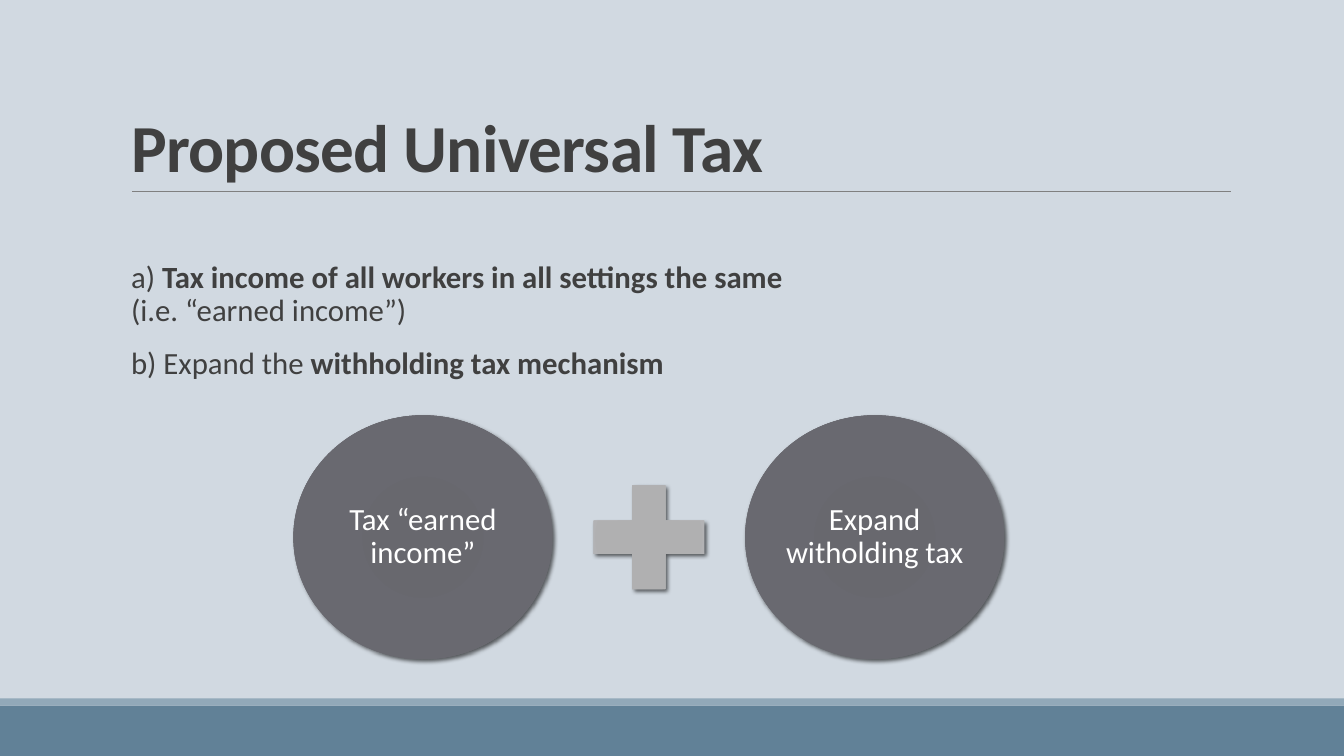
from lxml.etree import SubElement
from pptx import Presentation
from pptx.dml.color import RGBColor
from pptx.enum.shapes import MSO_CONNECTOR, MSO_SHAPE
from pptx.enum.text import MSO_ANCHOR, MSO_AUTO_SIZE, PP_ALIGN
from pptx.oxml import parse_xml
from pptx.oxml.ns import nsdecls, qn
from pptx.util import Inches, Pt

BACKGROUND = RGBColor(0xD1, 0xD9, 0xE1)
FOOTER = RGBColor(0x61, 0x81, 0x97)
FOOTER_EDGE = RGBColor(0x92, 0xA9, 0xB9)
RULE = RGBColor(0x80, 0x80, 0x80)
TEXT = RGBColor(0x40, 0x40, 0x40)
WHITE = RGBColor(0xFF, 0xFF, 0xFF)
# Gradient stops: position in percent and colour
CIRCLE_STOPS = [(0, RGBColor(0x67, 0x67, 0x6D)), (34, RGBColor(0x68, 0x68, 0x6E)),
                (70, RGBColor(0x69, 0x69, 0x70)), (100, RGBColor(0x6F, 0x6F, 0x74))]
PLUS_STOPS = [(0, RGBColor(0xAE, 0xAE, 0xAF)), (34, RGBColor(0xB0, 0xB0, 0xB1)),
              (70, RGBColor(0xB2, 0xB2, 0xB4)), (100, RGBColor(0xBB, 0xBB, 0xBC))]

FONT = "Calibri"
WIDTH, HEIGHT = 13.33, 7.5
POINTS = [
    [("a) ", False), ("Tax income of all workers in all settings the same \v", True),
     ("(i.e. “earned income”)", False)],
    [("b) Expand the ", False), ("withholding tax mechanism", True)],
]
TERMS = ["Tax “earned income”", "Expand witholding tax"]


def style(font, size, color, bold=None):
    font.name, font.size, font.bold = FONT, Pt(size), bold
    font.color.rgb = color


def place(shape, box):
    shape.left, shape.top, shape.width, shape.height = map(Inches, box)


def add_plain(slide, kind, box, color):
    shape = slide.shapes.add_shape(kind, *map(Inches, box))
    shape.shadow.inherit = False
    shape.fill.solid()
    shape.fill.fore_color.rgb = color
    shape.line.fill.background()
    return shape


def add_glossy(slide, kind, box, stops):
    """A shape with a radial gradient and a soft shadow."""
    shape = add_plain(slide, kind, box, stops[0][1])
    properties = shape.element.spPr
    stop_xml = "".join(f'<a:gs pos="{position * 1000}"><a:srgbClr val="{color}"/></a:gs>'
                       for position, color in stops)
    gradient = parse_xml(
        f'<a:gradFill {nsdecls("a")} rotWithShape="1"><a:gsLst>{stop_xml}</a:gsLst>'
        '<a:path path="circle"><a:fillToRect l="100000" t="100000" r="100000" b="100000"/>'
        '</a:path></a:gradFill>')
    properties.replace(properties.find(qn("a:solidFill")), gradient)
    shadow = parse_xml(
        f'<a:outerShdw {nsdecls("a")} blurRad="{Pt(3)}" dist="{Pt(2)}" dir="2700000"'
        ' rotWithShape="0"><a:srgbClr val="000000"><a:alpha val="60000"/></a:srgbClr>'
        '</a:outerShdw>')
    properties.find(qn("a:effectLst")).append(shadow)
    return shape


def add_footer(slide, box):
    left, top, width, height = box
    edge = 0.07
    add_plain(slide, MSO_SHAPE.RECTANGLE, (left, top + edge, width, height - edge), FOOTER)
    add_plain(slide, MSO_SHAPE.RECTANGLE, (left, top, width, edge), FOOTER_EDGE)


def add_title(slide, box):
    left, top, width, height = box
    title = slide.shapes.title
    place(title, box)
    frame = title.text_frame
    frame.text = "Proposed Universal Tax"
    frame.vertical_anchor = MSO_ANCHOR.BOTTOM
    frame.auto_size = MSO_AUTO_SIZE.NONE
    paragraph = frame.paragraphs[0]
    paragraph.alignment = PP_ALIGN.LEFT
    paragraph.line_spacing = 0.85
    style(paragraph.font, 48, TEXT, True)
    paragraph.runs[0].font._element.set("spc", "-50")

    # Rule under the title
    start, bottom = left + 0.11, top + height
    rule = slide.shapes.add_connector(MSO_CONNECTOR.STRAIGHT, Inches(start), Inches(bottom),
                                      Inches(start + 10.9), Inches(bottom))
    rule.line.color.rgb = RULE
    rule.line.width = Pt(0.5)
    SubElement(rule.element.spPr, qn("a:effectLst"))


def add_points(slide, box):
    body = slide.placeholders[1]
    place(body, box)
    frame = body.text_frame
    frame.auto_size = MSO_AUTO_SIZE.NONE
    frame.margin_right = 0
    for index, point in enumerate(POINTS):
        paragraph = frame.add_paragraph() if index else frame.paragraphs[0]
        paragraph.line_spacing = 0.9
        paragraph.space_before = Pt(12 if index else 0)
        paragraph.space_after = Pt(2)
        style(paragraph.font, 22, TEXT)
        for text, bold in point:
            start = len(paragraph.runs)
            # A line break ends its run
            words, line_break, _ = text.partition("\v")
            run = paragraph.add_run()
            run.text = words
            run.font.bold = bold
            if line_break:
                paragraph.add_line_break()
        properties = paragraph._p.get_or_add_pPr()
        properties.set("marL", "0")
        properties.set("indent", "0")
        properties.insert_element_before(parse_xml(f'<a:buNone {nsdecls("a")}/>'),
                                         "a:tabLst", "a:defRPr", "a:extLst")


def add_equation(slide, box):
    """Circles at both ends of the box, with a plus sign midway."""
    left, top, width, height = box
    circle_width, plus_width, plus_height = 2.57, 1.49, 1.4
    for index, term in enumerate(TERMS):
        circle_left = left + index * (width - circle_width)
        circle = add_glossy(slide, MSO_SHAPE.OVAL, (circle_left, top, circle_width, height),
                            CIRCLE_STOPS)
        frame = circle.text_frame
        frame.text = term
        frame.word_wrap = True
        frame.vertical_anchor = MSO_ANCHOR.MIDDLE
        frame.margin_left = frame.margin_right = frame.margin_top = frame.margin_bottom = 0
        paragraph = frame.paragraphs[0]
        paragraph.alignment = PP_ALIGN.CENTER
        paragraph.line_spacing = 0.9
        style(paragraph.font, 22, WHITE)
    plus_box = (left + (width - plus_width) / 2, top + (height - plus_height) / 2,
                plus_width, plus_height)
    add_glossy(slide, MSO_SHAPE.MATH_PLUS, plus_box, PLUS_STOPS)


def main():
    presentation = Presentation()
    presentation.slide_width, presentation.slide_height = Inches(WIDTH), Inches(HEIGHT)
    slide = presentation.slides.add_slide(presentation.slide_layouts[1])
    slide.background.fill.solid()
    slide.background.fill.fore_color.rgb = BACKGROUND

    add_footer(slide, (0, 6.93, WIDTH, HEIGHT - 6.93))
    add_title(slide, (1.2, 0.31, 11, 1.59))
    add_points(slide, (1.2, 2.55, 6.72, 1.5))
    add_equation(slide, (2.91, 4.12, 7.05, 2.42))
    presentation.save("out.pptx")


if __name__ == "__main__":
    main()
